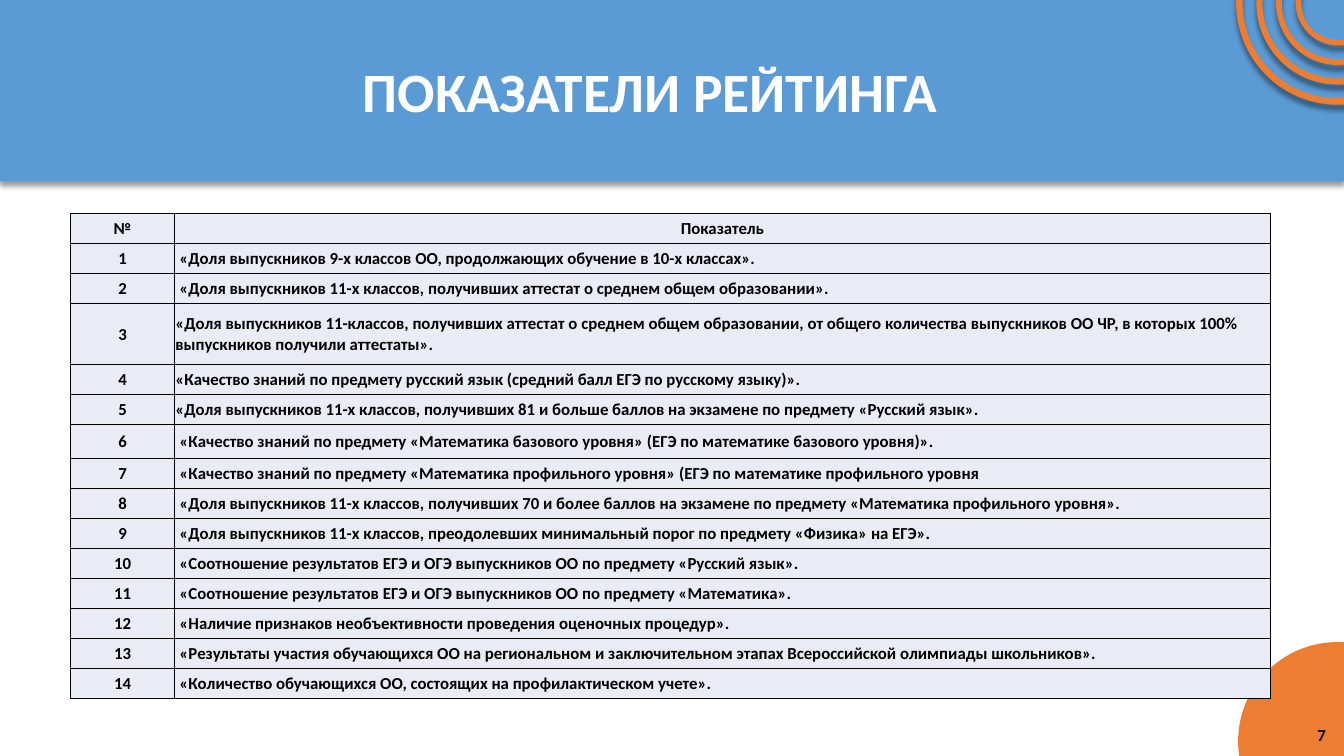
from pptx import Presentation
from pptx.dml.color import RGBColor
from pptx.enum.shapes import MSO_SHAPE
from pptx.enum.text import MSO_ANCHOR, PP_ALIGN
from pptx.oxml import parse_xml
from pptx.oxml.ns import nsdecls
from pptx.util import Inches, Pt

RECTANGLE, OVAL, DONUT = MSO_SHAPE.RECTANGLE, MSO_SHAPE.OVAL, MSO_SHAPE.DONUT
LEFT, CENTER, RIGHT = PP_ALIGN.LEFT, PP_ALIGN.CENTER, PP_ALIGN.RIGHT
MIDDLE = MSO_ANCHOR.MIDDLE

COLORS = {
    "banner": "5B9BD5",
    "accent": "ED7D31",
    "cell": "E9EBF5",
    "text": "000000",
    "title": "FFFFFF",
}

INDICATORS = [
    "«Доля выпускников 9-х классов ОО, продолжающих обучение в 10-х классах».",
    "«Доля выпускников 11-х классов, получивших аттестат о среднем общем образовании».",
    "«Доля выпускников 11-классов, получивших аттестат о среднем общем образовании, "
    "от общего количества выпускников ОО ЧР, в которых 100% выпускников получили аттестаты».",
    "«Качество знаний по предмету русский язык (средний балл ЕГЭ по русскому языку)».",
    "«Доля выпускников 11-х классов, получивших 81 и больше баллов на экзамене по предмету «Русский язык».",
    "«Качество знаний по предмету «Математика базового уровня» (ЕГЭ по математике базового уровня)».",
    "«Качество знаний по предмету «Математика профильного уровня» (ЕГЭ по математике профильного уровня",
    "«Доля выпускников 11-х классов, получивших 70 и более баллов на экзамене "
    "по предмету «Математика профильного уровня».",
    "«Доля выпускников 11-х классов, преодолевших минимальный порог по предмету «Физика» на ЕГЭ».",
    "«Соотношение результатов ЕГЭ и ОГЭ выпускников ОО по предмету «Русский язык».",
    "«Соотношение результатов ЕГЭ и ОГЭ выпускников ОО по предмету «Математика».",
    "«Наличие признаков необъективности проведения оценочных процедур».",
    "«Результаты участия обучающихся ОО на региональном и заключительном этапах "
    "Всероссийской олимпиады школьников».",
    "«Количество обучающихся ОО, состоящих на профилактическом учете».",
]
FLUSH_ROWS = (3, 4, 5)
SPECIAL_HEIGHTS = {3: 0.6, 6: 0.34}
TABLE_HEIGHT = 4.81


def rgb(name):
    return RGBColor.from_string(COLORS[name])


def write(frame, text, size=12, color="text", align=LEFT):
    frame.word_wrap = True
    paragraph = frame.paragraphs[0]
    paragraph.text = text
    paragraph.alignment = align
    font = paragraph.runs[0].font
    font.name, font.size, font.bold = "Calibri", Pt(size), True
    font.color.rgb = rgb(color)


class RatingSlide:
    """Holds the style of the rating slide and draws its elements."""

    def __init__(self, slide):
        self.slide = slide

    def shape(self, kind, left, top, width, height, color):
        figure = self.slide.shapes.add_shape(
            kind, Inches(left), Inches(top), Inches(width), Inches(height))
        figure.shadow.inherit = False
        figure.fill.solid()
        figure.fill.fore_color.rgb = rgb(color)
        figure.line.fill.background()
        return figure

    def shadow(self, figure, opacity, distance):
        effects = figure._element.spPr.find(
            "{http://schemas.openxmlformats.org/drawingml/2006/main}effectLst")
        effects.append(parse_xml(
            f'<a:outerShdw {nsdecls("a")} blurRad="{Pt(4)}" dist="{Pt(distance)}" dir="5400000" '
            f'rotWithShape="0"><a:srgbClr val="{COLORS["text"]}">'
            f'<a:alpha val="{opacity * 1000}"/></a:srgbClr></a:outerShdw>'))

    def ring(self, center_x, center_y, diameter):
        ring = self.shape(DONUT, center_x - diameter / 2, center_y - diameter / 2,
                          diameter, diameter, "accent")
        ring.adjustments[0] = 0.008
        ring.line.color.rgb = rgb("accent")
        ring.line.width = Pt(3.5)
        self.shadow(ring, 43, 4)

    def text(self, left, top, width, height, text, **style):
        box = self.slide.shapes.add_textbox(
            Inches(left), Inches(top), Inches(width), Inches(height))
        box.text_frame.vertical_anchor = MIDDLE
        write(box.text_frame, text, **style)

    def cell(self, cell, text, align=LEFT, indent=0.01):
        cell.vertical_anchor = MIDDLE
        cell.margin_left = Inches(indent)
        cell.margin_top = cell.margin_right = Inches(0.01)
        cell.margin_bottom = 0
        write(cell.text_frame, text, align=align)
        properties = cell._tc.get_or_add_tcPr()
        for side in ("lnL", "lnR", "lnT", "lnB"):
            properties.append(parse_xml(
                f'<a:{side} {nsdecls("a")} w="{Pt(1)}"><a:solidFill>'
                f'<a:srgbClr val="{COLORS["text"]}"/></a:solidFill></a:{side}>'))
        cell.fill.solid()
        cell.fill.fore_color.rgb = rgb("cell")

    def table(self, left, top, widths, indicators):
        count = len(indicators) + 1
        table = self.slide.shapes.add_table(
            count, len(widths), Inches(left), Inches(top),
            Inches(sum(widths)), Inches(TABLE_HEIGHT)).table
        for column, width in zip(table.columns, widths):
            column.width = Inches(width)
        regular = (TABLE_HEIGHT - sum(SPECIAL_HEIGHTS.values())) / (count - len(SPECIAL_HEIGHTS))
        for number, row in enumerate(table.rows):
            row.height = Inches(SPECIAL_HEIGHTS.get(number, regular))
        self.cell(table.cell(0, 0), "№", CENTER)
        self.cell(table.cell(0, 1), "Показатель", CENTER)
        for number, indicator in enumerate(indicators, 1):
            self.cell(table.cell(number, 0), str(number), CENTER)
            self.cell(table.cell(number, 1), indicator,
                      indent=0.01 if number in FLUSH_ROWS else 0.05)


def main():
    deck = Presentation()
    deck.slide_width, deck.slide_height = Inches(13.33), Inches(7.5)
    rating = RatingSlide(deck.slides.add_slide(deck.slide_layouts[6]))
    banner = rating.shape(RECTANGLE, 0, 0, 13.33, 1.8, "banner")
    rating.shadow(banner, 40, 3)
    rating.shape(OVAL, 12.28, 6.37, 1.97, 1.97, "accent")
    for diameter in (1.97, 1.57, 1.18, 0.79):
        rating.ring(13.27, 0.03, diameter)
    rating.text(0.7, 0.17, 11.5, 1.45, "ПОКАЗАТЕЛИ РЕЙТИНГА",
                size=39.6, color="title", align=CENTER)
    rating.table(0.7, 2.12, (1.03, 10.87), INDICATORS)
    rating.text(10.25, 7.09, 3, 0.4, "7", align=RIGHT)
    deck.save("out.pptx")


if __name__ == "__main__":
    main()
